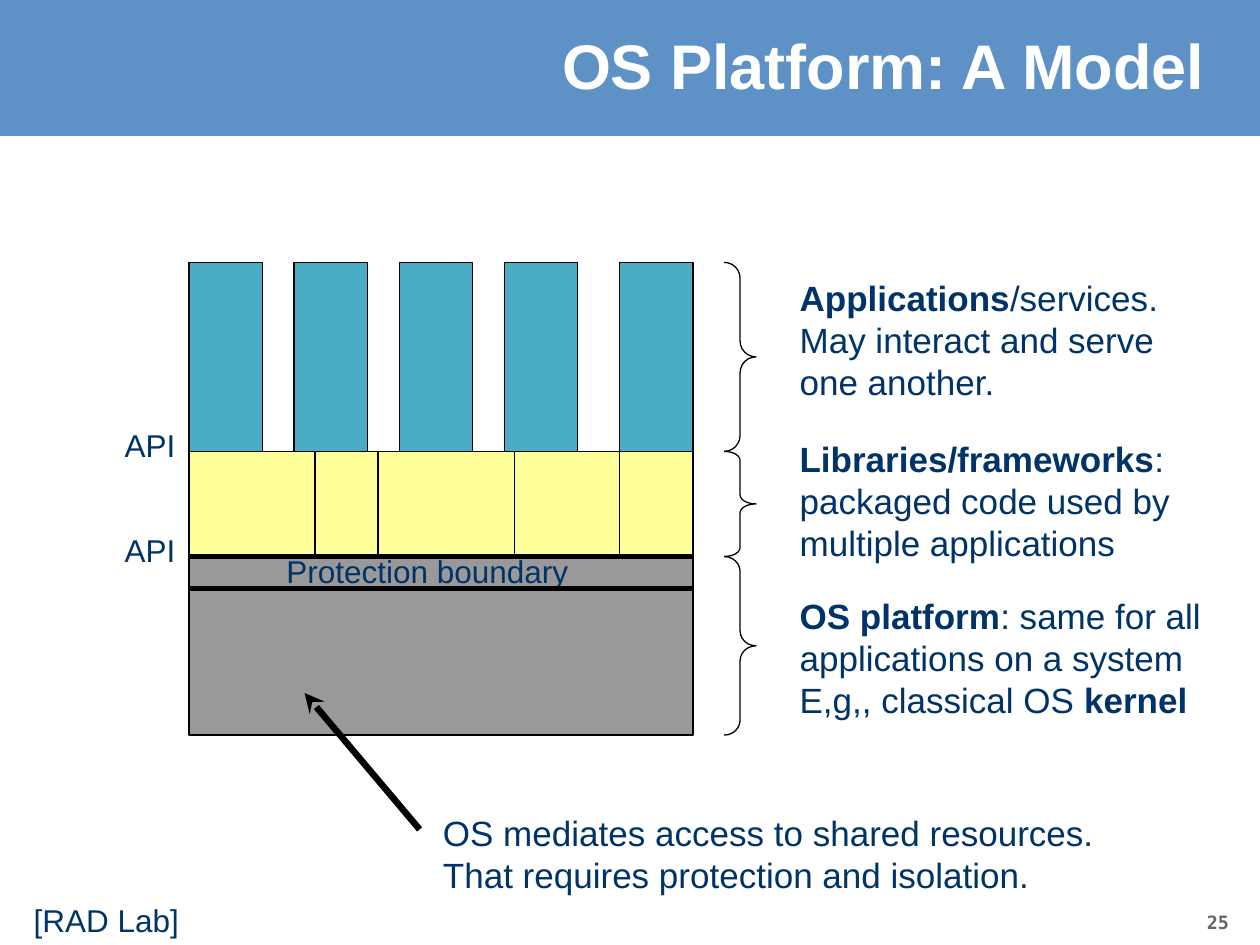
from itertools import accumulate

from lxml.etree import SubElement
from pptx import Presentation
from pptx.dml.color import RGBColor as RGB
from pptx.enum.shapes import MSO_CONNECTOR as LINK, MSO_SHAPE as SHAPE
from pptx.enum.text import MSO_ANCHOR as ANCHOR, MSO_AUTO_SIZE as FIT, PP_ALIGN as ALIGN
from pptx.oxml import parse_xml
from pptx.oxml.ns import qn
from pptx.util import Cm, Pt

HUES = {"head": "5E91C5", "shade": "336799", "white": "FFFFFF", "ink": "003367",
        "page": "666666", "app": "4BACC6", "lib": "FFFF99", "os": "999999",
        "line": "000000"}
SHADOW = ('<a:effectLst xmlns:a="http://schemas.openxmlformats.org/drawingml/2006/main">'
          '<a:outerShdw dist="38100" dir="2700000"><a:srgbClr val="%s"/>'
          '</a:outerShdw></a:effectLst>' % HUES["shade"])

# Tiers from top to bottom: height, brace bend, note offset, note width, note
# (in a note, each paragraph is a list of (text, bold) runs)
TIERS = [
    (3.81, 0.5, 0.15, 8.69,
     [[("Applications", True),
       ("/services. May interact and serve one another.", False)]]),
    (2.12, 0.28, -0.41, 9.09,
     [[("Libraries/frameworks", True),
       (": packaged code used by multiple applications", False)]]),
    (3.6, 0.47, 0.64, 9.09,
     [[("OS platform", True), (": same for all applications on a system", False)],
      [("E,g,, classical OS ", False), ("kernel", True)]]),
]
TOPS = [0, *accumulate(tier[0] for tier in TIERS)]


def hue(name):
    return RGB.from_string(HUES[name])


def write(slide, box, paras, size=18, color="ink", font="Arial", bold=False,
          align=ALIGN.LEFT, anchor=ANCHOR.TOP, wrap=False, space=None, shadow=False):
    """Add a text box; paras is a string or a list of paragraphs of runs."""
    frame = slide.shapes.add_textbox(*map(Cm, box)).text_frame
    frame.word_wrap = wrap
    frame.vertical_anchor = anchor
    frame.auto_size = FIT.NONE if shadow else FIT.SHAPE_TO_FIT_TEXT
    if isinstance(paras, str):
        paras = [[(line, bold)] for line in paras.split("\n")]
    for i, runs in enumerate(paras):
        para = frame.add_paragraph() if i else frame.paragraphs[0]
        para.alignment = align
        para.line_spacing = space
        for text, heavy in runs:
            run = para.add_run()
            run.text = text
            run.font.size, run.font.name, run.font.bold = Pt(size), font, heavy
            run.font.color.rgb = hue(color)
            if shadow:
                fill = run.font._element.find(qn("a:solidFill"))
                fill.addnext(parse_xml(SHADOW))


def draw(slide, kind, box, fill=None, line=True):
    """Add a preset shape with an optional fill and thin outline."""
    shape = slide.shapes.add_shape(kind, *map(Cm, box))
    shape.shadow.inherit = False
    if fill:
        shape.fill.solid()
        shape.fill.fore_color.rgb = hue(fill)
    else:
        shape.fill.background()
    if line:
        shape.line.color.rgb = hue("line")
        shape.line.width = Pt(0.75)
    else:
        shape.line.fill.background()
    return shape


def rule(slide, ends, width, head=None):
    """Add a straight line, with an arrowhead at its start if asked."""
    link = slide.shapes.add_connector(LINK.STRAIGHT, *map(Cm, ends))
    link.line.color.rgb = hue("line")
    link.line.width = Pt(width)
    if head:
        SubElement(link.line._get_or_add_ln(), qn("a:headEnd"), type=head)
    SubElement(link._element.spPr, qn("a:effectLst"))


def header(slide, box):
    x, y, w, h = box
    draw(slide, SHAPE.RECTANGLE, box, "head", line=False)
    write(slide, (x + 6.35, y + 0.36, 18.19, 2.11), "OS Platform: A Model",
          size=36, color="white", bold=True, align=ALIGN.RIGHT,
          anchor=ANCHOR.MIDDLE, wrap=True, space=0.85, shadow=True)


def stack(slide, box):
    x, y, w, h = box
    apps, libs, base = (y + top for top in TOPS[:3])
    high, mid, low = (tier[0] for tier in TIERS)
    wide = 1.48

    # Platform, libraries and applications
    draw(slide, SHAPE.RECTANGLE, (x, base, w, low), "os")
    spans = [2.54, 1.27, 2.75, 2.12, wide]
    for left, span in zip(accumulate([0] + spans), spans):
        draw(slide, SHAPE.RECTANGLE, (x + left, libs, span, mid), "lib")
    for left in [i * 2.12 for i in range(4)] + [w - wide]:
        draw(slide, SHAPE.RECTANGLE, (x + left, apps, wide, high), "app")

    # Protection boundary, its label between two thick rules
    rule(slide, (x, base, x + w, base), 3)
    write(slide, (x + 1.68, base - 0.22, 6.25, 1.02), "Protection boundary",
          align=ALIGN.CENTER)
    rule(slide, (x, base + 0.64, x + w, base + 0.64), 3)

    # API labels beside the tier borders
    for top in (libs, base):
        write(slide, (x - 1.57, top - 0.64, 1.57, 1.02), "API", align=ALIGN.CENTER)


def notes(slide, box):
    x, y, w, h = box
    for top, (tall, bend, drop, wide, paras) in zip(TOPS, TIERS):
        brace = draw(slide, SHAPE.RIGHT_BRACE, (x, y + top, 0.64, tall))
        brace.adjustments[0] = bend
        write(slide, (x + 1.27, y + top + drop, wide, 2.82), paras, size=20, wrap=True)


def remark(slide, box):
    x, y, w, h = box
    rule(slide, (x - 2.54, y - 2.26, x - 0.22, y + 0.49), 3.75, head="stealth")
    write(slide, box, "OS mediates access to shared resources.\n"
          "That requires protection and isolation.", size=20)


def footer(slide, box):
    x, y, w, h = box
    write(slide, (x + 0.43, y, 3.48, h), "[RAD Lab]")
    write(slide, (x + w - 1.32, y + 0.21, 1.3, h), "25", size=10.5, color="page",
          font="DejaVu Sans Mono", bold=True)


def main():
    deck = Presentation()
    deck.slide_width, deck.slide_height = Cm(25.4), Cm(19.05)
    slide = deck.slides.add_slide(deck.slide_layouts[6])
    header(slide, (0, 0, 25.4, 2.74))
    stack(slide, (3.81, 5.29, 10.16, TOPS[-1]))
    notes(slide, (14.6, 5.29, 10.36, TOPS[-1]))
    remark(slide, (8.68, 16.23, 13.74, 1.96))
    footer(slide, (0, 18.03, 25.4, 1.02))
    deck.save("out.pptx")


if __name__ == "__main__":
    main()
